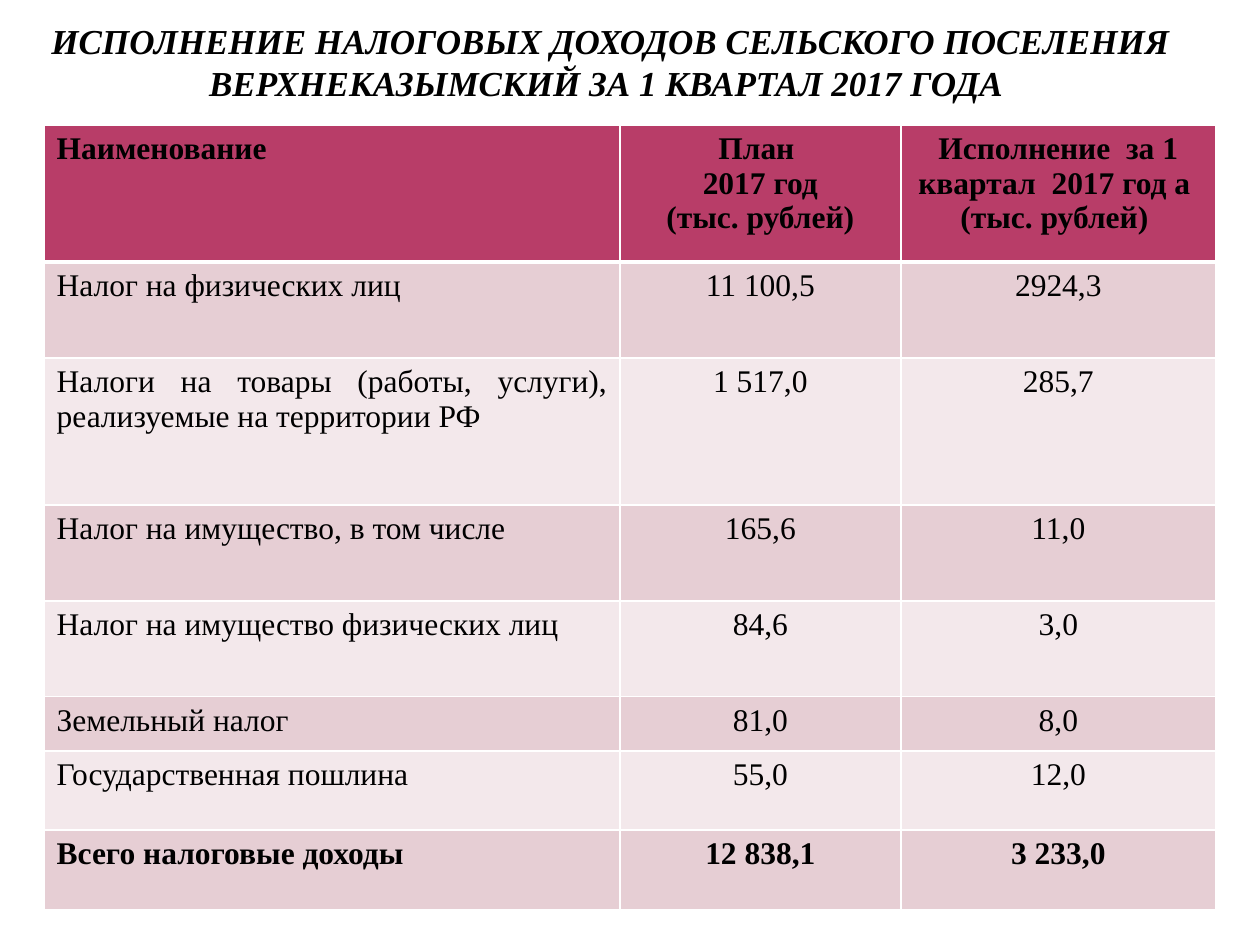
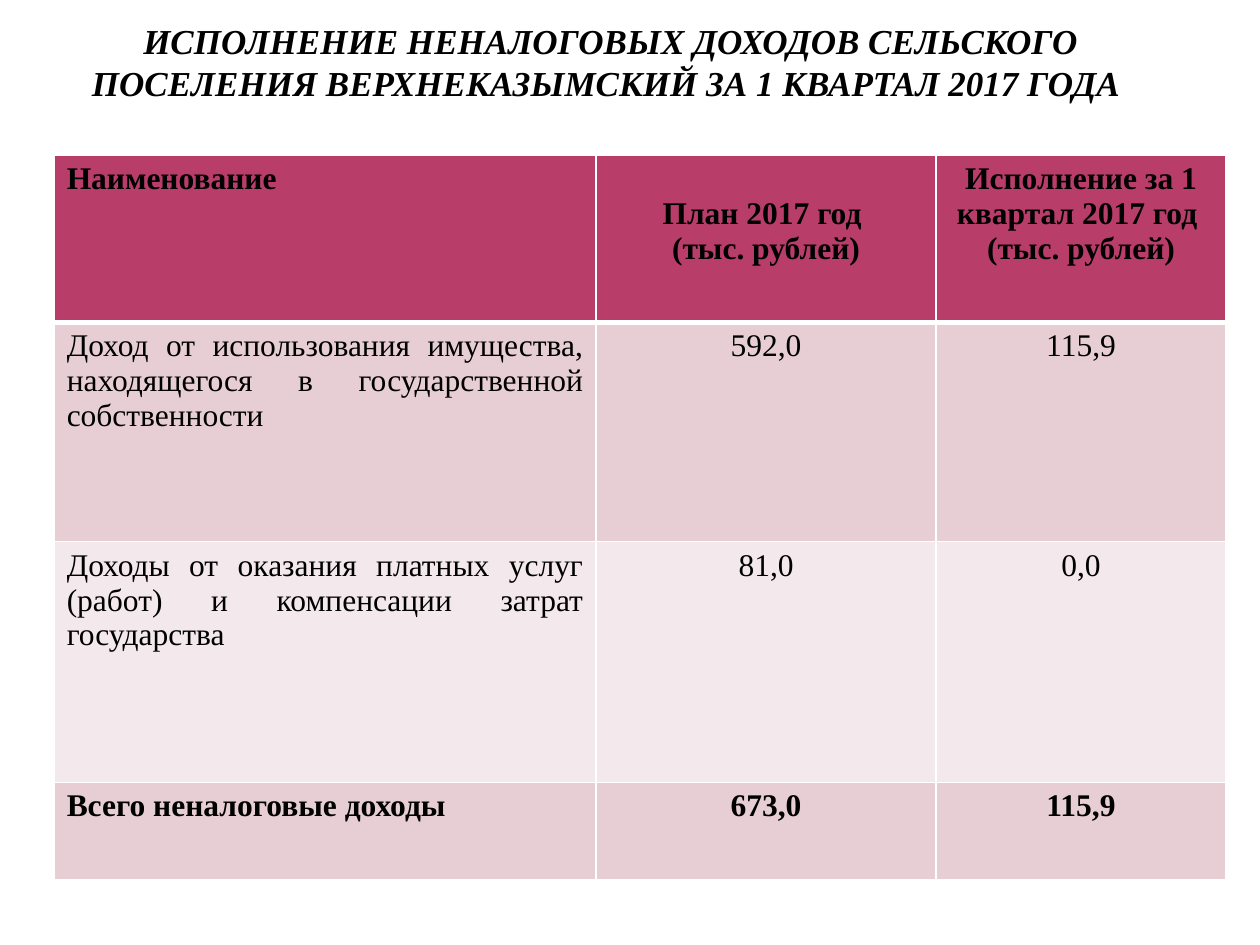
from dataclasses import dataclass

from lxml import etree
from pptx import Presentation
from pptx.dml.color import RGBColor
from pptx.enum.text import MSO_ANCHOR, MSO_AUTO_SIZE, PP_ALIGN as Align
from pptx.oxml.ns import qn
from pptx.util import Inches, Pt


@dataclass(frozen=True)
class Theme:
    font: str = "Times New Roman"
    title_size: int = 20
    table_size: int = 18
    text: str = "000000"
    header: str = "B83D68"
    bands: tuple = ("E6CED4", "F3E8EB")
    border: str = "FFFFFF"
    thin: int = 1
    thick: int = 3


theme = Theme()


def style(p, size, align, bold, italic=False):
    p.alignment = align
    p.font.name = theme.font
    p.font.size = Pt(size)
    p.font.bold = bold
    p.font.italic = italic
    p.font.color.rgb = RGBColor.from_string(theme.text)


def set_borders(cell, top, bottom):
    """Draw the four cell borders; they must precede the fill in tcPr."""
    tcPr = cell._tc.get_or_add_tcPr()
    sides = (("a:lnL", theme.thin), ("a:lnR", theme.thin),
             ("a:lnT", top), ("a:lnB", bottom))
    for i, (tag, width) in enumerate(sides):
        ln = etree.Element(qn(tag), w=str(Pt(width)))
        fill = etree.SubElement(ln, qn("a:solidFill"))
        etree.SubElement(fill, qn("a:srgbClr"), val=theme.border)
        tcPr.insert(i, ln)


# Content: the first table row is the header, the last one the total
slides = [
    {
        "title": "ИСПОЛНЕНИЕ НАЛОГОВЫХ ДОХОДОВ СЕЛЬСКОГО ПОСЕЛЕНИЯ "
                 "ВЕРХНЕКАЗЫМСКИЙ ЗА 1 КВАРТАЛ 2017 ГОДА ",
        "left": 0.35, "top": 0.99,
        "cols": [4.57, 2.23, 2.5],
        "heights": [1.09, 0.76, 1.17, 0.76, 0.76, 0.43, 0.63, 0.63],
        "plan_margin": 0.05,
        "rows": [
            ("Наименование", "План \n2017 год\n(тыс. рублей)",
             "Исполнение  за 1 квартал  2017 год а \n(тыс. рублей) "),
            ("Налог на физических лиц", "11 100,5", "2924,3"),
            ("Налоги на товары (работы, услуги), реализуемые на территории РФ",
             "1 517,0", "285,7"),
            ("Налог на имущество, в том числе", "165,6", "11,0"),
            ("Налог на имущество физических лиц", "84,6", "3,0"),
            ("Земельный налог", "81,0", "8,0"),
            ("Государственная пошлина", "55,0", "12,0"),
            ("Всего налоговые доходы", "12 838,1", "3 233,0"),
        ],
    },
    {
        "title": "ИСПОЛНЕНИЕ НЕНАЛОГОВЫХ ДОХОДОВ СЕЛЬСКОГО ПОСЕЛЕНИЯ "
                 "ВЕРХНЕКАЗЫМСКИЙ ЗА 1 КВАРТАЛ 2017 ГОДА ",
        "left": 0.43, "top": 1.23,
        "cols": [4.3, 2.7, 2.3],
        "heights": [1.33, 1.74, 1.91, 0.77],
        "plan_margin": 0.33,
        "rows": [
            ("Наименование", "План 2017 год \n(тыс. рублей)",
             "Исполнение за 1 квартал 2017 год \n(тыс. рублей)"),
            ("Доход от использования имущества, находящегося в "
             "государственной собственности", "592,0", "115,9"),
            ("Доходы от оказания платных услуг (работ) и компенсации затрат "
             "государства", "81,0", "0,0"),
            ("Всего неналоговые доходы", "673,0", "115,9"),
        ],
    },
]

prs = Presentation()
prs.slide_width, prs.slide_height = Inches(10), Inches(7.5)

for content in slides:
    s = prs.slides.add_slide(prs.slide_layouts[5])

    # Title
    sp = s.shapes.title
    sp.left, sp.top = Inches(0.35), Inches(0.13)
    sp.width, sp.height = Inches(8.99), Inches(0.69)
    tf = sp.text_frame
    tf.text = content["title"]
    tf.word_wrap = True
    tf.auto_size = MSO_AUTO_SIZE.NONE
    tf.vertical_anchor = MSO_ANCHOR.BOTTOM
    tf.margin_left = tf.margin_right = Inches(0.05)
    tf.margin_top = tf.margin_bottom = 0
    style(tf.paragraphs[0], theme.title_size, Align.CENTER, True, True)

    # Table grid
    rows, cols, heights = content["rows"], content["cols"], content["heights"]
    table = s.shapes.add_table(
        len(rows), len(cols), Inches(content["left"]), Inches(content["top"]),
        Inches(sum(cols)), Inches(sum(heights))).table
    for column, width in zip(table.columns, cols):
        column.width = Inches(width)
    for row, height in zip(table.rows, heights):
        row.height = Inches(height)

    # Table cells
    last = len(rows) - 1
    for r, values in enumerate(rows):
        color = theme.header if r == 0 else theme.bands[(r - 1) % 2]
        for c, value in enumerate(values):
            cell = table.cell(r, c)
            cell.text = value
            cell.fill.solid()
            cell.fill.fore_color.rgb = RGBColor.from_string(color)
            set_borders(cell, theme.thick if r == 1 else theme.thin,
                        theme.thick if r == 0 else theme.thin)
            if c > 0:
                align = Align.CENTER
            else:
                align = Align.LEFT if r in (0, last) else Align.JUSTIFY
            for p in cell.text_frame.paragraphs:
                style(p, theme.table_size, align, r in (0, last))
    table.cell(0, 1).margin_top = Inches(content["plan_margin"])

prs.save("out.pptx")
